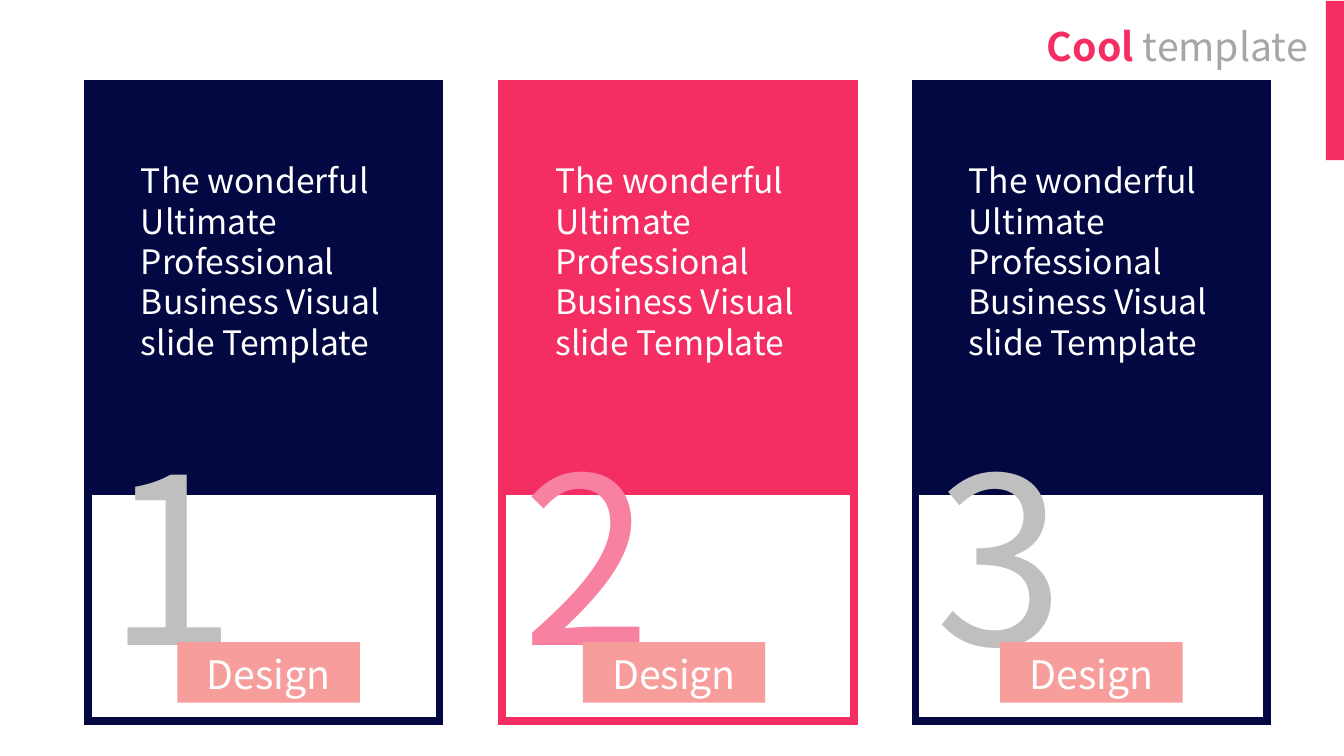
from lxml import etree
from pptx import Presentation
from pptx.dml.color import RGBColor
from pptx.enum.shapes import MSO_SHAPE
from pptx.enum.text import MSO_ANCHOR, MSO_AUTO_SIZE, PP_ALIGN
from pptx.oxml.ns import qn
from pptx.util import Pt

PX = 9144  # 100 px to the inch
FONT = "Noto Sans CJK JP"
NAVY = RGBColor(0x03, 0x08, 0x42)
PINK = RGBColor(0xF4, 0x2D, 0x62)
LIGHT_PINK = RGBColor(0xF8, 0x81, 0xA1)
SALMON = RGBColor(0xF7, 0x9E, 0x9C)
SILVER = RGBColor(0xBF, 0xBF, 0xBF)
GREY = RGBColor(0xA6, 0xA6, 0xA6)
WHITE = RGBColor(0xFF, 0xFF, 0xFF)

prs = Presentation()
prs.slide_width, prs.slide_height = 1333 * PX, 750 * PX
s = prs.slides.add_slide(prs.slide_layouts[5])


def add_rect(box, fill, line=None):
    sp = s.shapes.add_shape(MSO_SHAPE.RECTANGLE, *[v * PX for v in box])
    sp.shadow.inherit = False
    sp.fill.solid()
    sp.fill.fore_color.rgb = fill
    if line is None:
        sp.line.fill.background()
    else:
        sp.line.color.rgb = line
        sp.line.width = Pt(5.5)
        # Square outer corners
        ln = sp.element.spPr.find(qn("a:ln"))
        etree.SubElement(ln, qn("a:miter")).set("lim", "800000")
    return sp


def write(sp, runs, size, align=PP_ALIGN.LEFT, wrap=True):
    tf = sp.text_frame
    frame_format = {"word_wrap": wrap, "vertical_anchor": MSO_ANCHOR.TOP,
                    "auto_size": MSO_AUTO_SIZE.SHAPE_TO_FIT_TEXT}
    for name, value in frame_format.items():
        setattr(tf, name, value)
    p = tf.paragraphs[0]
    p.alignment = align
    for text, color, bold in runs:
        r = p.add_run()
        r.text = text
        for name, value in {"name": FONT, "size": Pt(size), "bold": bold}.items():
            setattr(r.font, name, value)
        r.font.color.rgb = color


# Title and corner bar
title = s.shapes.title
title_box = {"left": 1014, "top": 17, "width": 293, "height": 57}
for name, value in title_box.items():
    setattr(title, name, value * PX)
write(title, [("Cool ", PINK, True), ("template", GREY, False)], 28,
      PP_ALIGN.RIGHT, wrap=False)
add_rect((1315, 1, 18, 158), PINK)

# Three numbered cards: left edge, label left edge, card colour, number colour
cards = [
    (87, 176, NAVY, SILVER),
    (498, 578, PINK, LIGHT_PINK),
    (908, 992, NAVY, SILVER),
]
for number, (x, label_x, color, number_color) in enumerate(cards, 1):
    add_rect((x, 83, 349, 402), color, color)
    add_rect((x, 487, 349, 228), WHITE, color)

    number_box = s.shapes.add_textbox(*[v * PX for v in (x + 10, 405, 165, 289)])
    write(number_box, [(str(number), number_color, False)], 166, wrap=False)

    label = add_rect((label_x, 637, 181, 60), SALMON)
    label.text_frame.margin_top = 8 * PX
    write(label, [("Design", WHITE, False)], 28, PP_ALIGN.CENTER)

    body = s.shapes.add_textbox(*[v * PX for v in (x + 43, 154, 264, 252)])
    write(body, [("The wonderful Ultimate Professional Business Visual slide Template",
                  WHITE, False)], 24)

prs.save("out.pptx")
